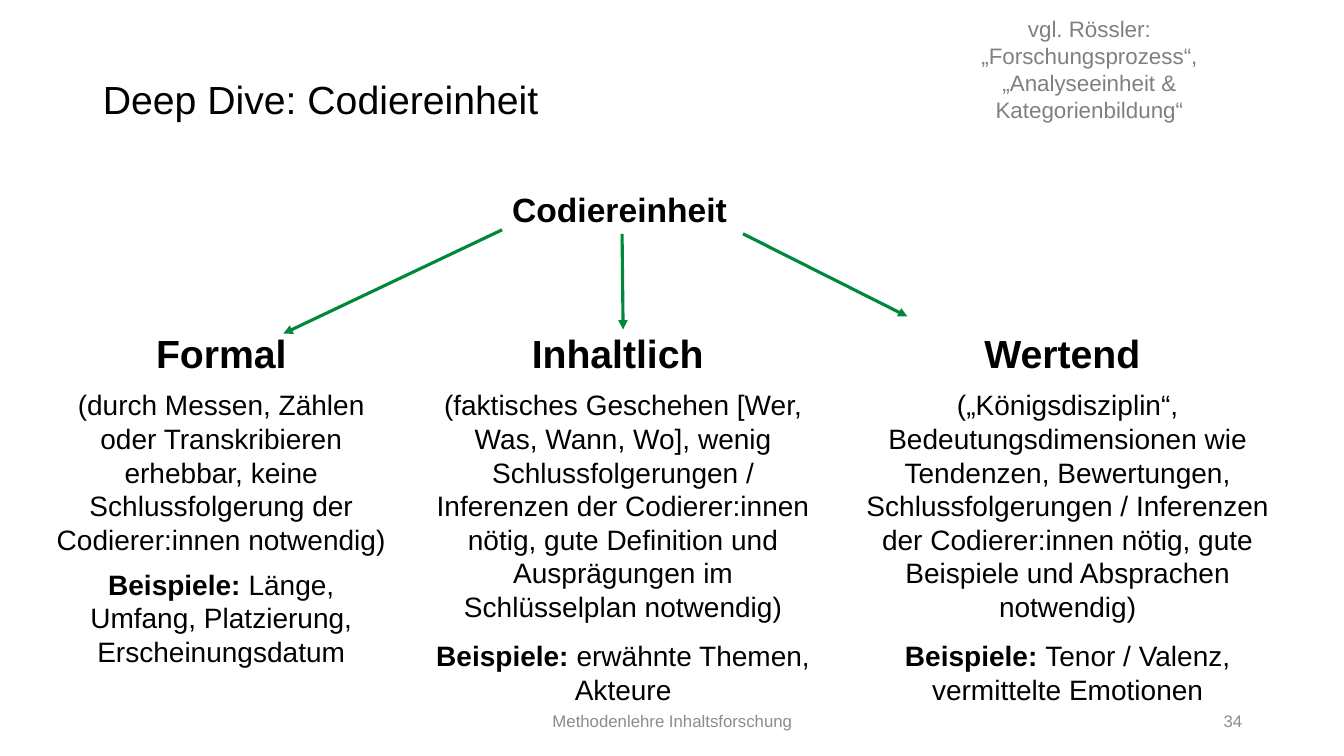
from lxml import etree
from pptx import Presentation
from pptx.dml.color import RGBColor
from pptx.enum import shapes, text
from pptx.oxml.ns import qn
from pptx.util import Inches, Pt

BLACK, GREY, PALE, GREEN = "000000", "808080", "8C8C8C", "00883A"
LEFT, MID, RIGHT = text.PP_ALIGN.LEFT, text.PP_ALIGN.CENTER, text.PP_ALIGN.RIGHT
TOP, CENTRE, BASE = (text.MSO_ANCHOR.TOP, text.MSO_ANCHOR.MIDDLE,
                     text.MSO_ANCHOR.BOTTOM)

COLUMNS = [
    (0.51, 3.37, "Formal",
     "(durch Messen, Zählen oder Transkribieren erhebbar, keine "
     "Schlussfolgerung der Codierer:innen notwendig)",
     "Länge, Umfang, Platzierung, Erscheinungsdatum", 8),
    (4.32, 3.72, "Inhaltlich ",
     "(faktisches Geschehen [Wer, Was, Wann, Wo], wenig Schlussfolgerungen / "
     "Inferenzen der Codierer:innen nötig, gute Definition und Ausprägungen "
     "im Schlüsselplan notwendig)",
     "erwähnte Themen, Akteure", 11),
    (8.46, 4.26, "Wertend ",
     "(„Königsdisziplin“, Bedeutungsdimensionen wie Tendenzen, Bewertungen, "
     "Schlussfolgerungen / Inferenzen der Codierer:innen nötig, gute "
     "Beispiele und Absprachen notwendig)",
     "Tenor / Valenz, vermittelte Emotionen", 11),
]
ARROWS = [
    (4.98, 2.28, 2.81, 3.31),
    (6.17, 2.32, 6.18, 3.27),
    (7.37, 2.32, 9, 3.14),
]


def paint(target, shade):
    target.rgb = RGBColor.from_string(shade)


def place(shape, left, top, width, height):
    shape.left, shape.top = Inches(left), Inches(top)
    shape.width, shape.height = Inches(width), Inches(height)


def setup(frame, anchor, inset=None):
    frame.word_wrap = True
    frame.auto_size = text.MSO_AUTO_SIZE.NONE
    frame.vertical_anchor = anchor
    if inset is not None:
        frame.margin_left = frame.margin_right = Inches(inset)
        frame.margin_top = frame.margin_bottom = Inches(inset)


def write(para, runs, size, shade=BLACK, align=MID, before=0):
    """Fill a paragraph with (wording, bold) runs."""
    para.alignment = align
    para.space_before = Pt(before)
    for words, bold in runs:
        run = para.add_run()
        run.text = words
        run.font.name = "Arial"
        run.font.size = Pt(size)
        run.font.bold = bold
        paint(run.font.color, shade)


def add_box(slide, spot, anchor=TOP, inset=None):
    box = slide.shapes.add_textbox(*map(Inches, spot))
    setup(box.text_frame, anchor, inset)
    return box.text_frame


def add_title(slide):
    title = slide.shapes.title
    place(title, 0.92, 0.4, 12.21, 0.87)
    setup(title.text_frame, BASE)
    para = title.text_frame.paragraphs[0]
    para.line_spacing = 0.9
    write(para, [("Deep Dive: Codiereinheit", False)], 28, align=LEFT)


def add_root(slide):
    body = slide.placeholders[1]
    place(body, 4.98, 1.82, 2.67, 0.75)
    setup(body.text_frame, TOP)
    para = body.text_frame.paragraphs[0]
    props = para._p.get_or_add_pPr()
    props.set("marL", "0")
    props.set("indent", "0")
    etree.SubElement(props, qn("a:buNone"))
    write(para, [("Codiereinheit", True)], 24, align=LEFT)


def add_source(slide):
    frame = add_box(slide, (9.2, 0.15, 3.21, 0.79), inset=0)
    lines = ["vgl. Rössler:", "„Forschungsprozess“,",
             "„Analyseeinheit & Kategorienbildung“"]
    for i, line in enumerate(lines):
        para = frame.add_paragraph() if i else frame.paragraphs[0]
        write(para, [(line, False)], 16, GREY)


def add_column(slide, left, width, head, detail, cases, gap):
    frame = add_box(slide, (left, 3.27, width, 0.55), inset=0)
    write(frame.paragraphs[0], [(head, True)], 28)
    write(frame.add_paragraph(), [(detail, False)], 20, before=8)
    write(frame.add_paragraph(), [("Beispiele: ", True), (cases, False)],
          20, before=gap)


def add_arrow(slide, *ends):
    arrow = slide.shapes.add_connector(
        shapes.MSO_CONNECTOR.STRAIGHT, *map(Inches, ends))
    arrow.line.width = Pt(2.25)
    paint(arrow.line.color, GREEN)
    tip = etree.SubElement(arrow.line._get_or_add_ln(), qn("a:tailEnd"))
    tip.set("type", "triangle")
    etree.SubElement(arrow._element.spPr, qn("a:effectLst"))


def add_footer(slide, left, width, words, align):
    frame = add_box(slide, (left, 6.95, width, 0.4), CENTRE)
    write(frame.paragraphs[0], [(words, False)], 12, PALE, align)


def main():
    deck = Presentation()
    deck.slide_width, deck.slide_height = Inches(13.33), Inches(7.5)
    slide = deck.slides.add_slide(deck.slide_layouts[1])
    add_title(slide)
    add_footer(slide, 2.08, 9.18, "Methodenlehre Inhaltsforschung", MID)
    add_footer(slide, 11.34, 1.08, "34", RIGHT)
    add_source(slide)
    add_root(slide)
    for ends in ARROWS:
        add_arrow(slide, *ends)
    for column in COLUMNS:
        add_column(slide, *column)
    deck.save("out.pptx")


if __name__ == "__main__":
    main()
